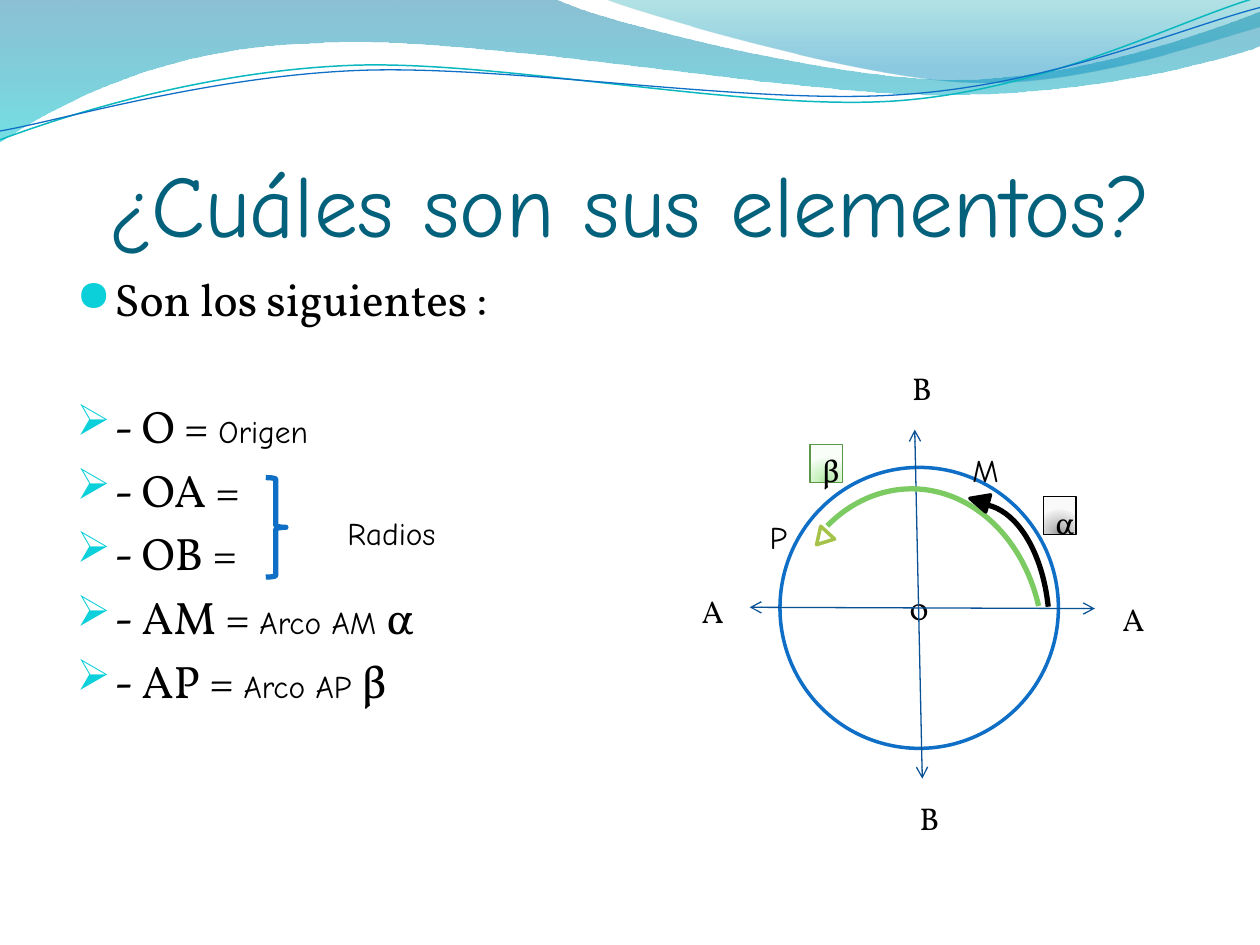
import pptx
import pptx.util
import pptx.dml.color
import pptx.enum.shapes
import pptx.enum.text
import pptx.oxml
import pptx.oxml.ns

SHAPE = pptx.enum.shapes.MSO_SHAPE
ALIGN = pptx.enum.text.PP_ALIGN
ANCHOR = pptx.enum.text.MSO_ANCHOR

THEME = {
    "hand": "Comic Neue", "serif": "Vollkorn", "bullet_font": "OpenSymbol",
    "title_size": 50, "body_size": 26, "label_size": 18, "body_gap": 5.2, "lead_gap": 41.5,
    "ink": "000000", "title": "04617B", "bullet": "0BD0D9", "paper": "FFFFFF",
    "blue": "0F6FC6", "axis": "095295", "teal": "0AB8BF",
    "green": "7CCA62", "green_edge": "5B9747", "lime": "A5C249",
}

# All positions are in cells of a grid of 100 columns by 75 rows.
COLUMNS, ROWS = 100, 75
CELL = pptx.util.Inches(10) // COLUMNS

# Waves: a start point, then line ends (2 numbers) or cubic curves (6 numbers).
BANDS = [
    ([(0, 0), (44, -0.1), (47.6, 1.7, 66.4, 6.3, 75.8, 6.3), (85.3, 6.3, 95.8, 2.6, 100, 0.9),
      (100.1, 3.6), (98.3, 4.4, 87, 7.6, 74.6, 7.5), (62.2, 7.5, 38.2, 2.8, 25.7, 3.4),
      (12.9, 3.6, 4.6, 8.3, -0.1, 11.3), (0, 0)],
     [(0, "0074A1", 45), (100, "00C6CF", 55)]),
    ([(47.9, -0.1), (50.9, 1.1, 68.2, 6.2, 76.9, 6.5), (85.6, 6.9, 96.1, 3.2, 100, 2.1),
      (100, 0), (47.9, -0.1)],
     [(0, "00A1A9", 30), (80, "008BBF", 45)]),
]
RIPPLES = [
    ([(0, 11.1), (4.8, 9.3, 15.8, 5.7, 27.7, 5.2), (39.5, 4.7, 59.3, 8.9, 71.3, 8),
      (83.3, 7.1, 93.8, 1.5, 99.8, -0.2)], "teal", 0.85),
    ([(0, 10.4), (4.7, 9.6, 16.4, 6.1, 28.3, 5.6), (40.3, 5.1, 59.7, 8.4, 71.7, 7.5),
      (83.6, 6.7, 94.1, 2.1, 100, 0.6)], "blue", 0.75),
]

TITLE = "¿Cuáles son sus elementos?"
# Each item: bullet, then its serif, handwritten and closing serif text.
ITEMS = [
    ("●", "Son los siguientes :", "", ""),
    ("➢", "- O = ", "Origen", ""),
    ("➢", "- OA =", "", ""),
    ("➢", "- OB =", "", ""),
    ("➢", "- AM = ", "Arco AM ", "α"),
    ("➢", "- AP = ", "Arco AP ", "β"),
]
LABELS = [
    ("Radios", "hand", (26.6, 40.3, 9.6, 4)),
    ("A", "serif", (54.7, 46.5, 2.8, 3)), ("A", "serif", (88.1, 47.1, 2.8, 3)),
    ("B", "serif", (71.4, 28.8, 2.7, 3)), ("B", "serif", (72, 62.9, 2.7, 3)),
    ("M", "hand", (76.2, 35.3, 3, 3)), ("P", "hand", (60.1, 40.6, 2.5, 3)),
]
AXES = [((72.6, 34.1), (73.2, 61.8)), ((59.5, 48.2), (86.9, 48.3))]
ARCS = [
    ((72, 40, 11.3, 20), (162, 204.97), "ink"),
    ((61.9, 38.8, 20.9, 25.3), (141.25, 204.97), "green"),
]
TIPS = [((77, 39, 1.4, 1.5), 285.5, "ink", "ink"), ((64.5, 42.1, 1.5, 1.3), 222.6, "paper", "lime")]
ANGLES = [
    ("α", (82.8, 39.4, 2.6, 3), "ink",
     [(0, "979797", 100), (43, "C6C6C6", 100), (93, "EEEEEE", 100), (100, "F9F9F9", 100)]),
    ("β", (64.3, 35.3, 2.6, 3), "green_edge",
     [(0, "ACE49F", 100), (43, "CDF3C4", 100), (93, "EFFBED", 100), (100, "F9FFF8", 100)]),
]

deck = pptx.Presentation()
deck.slide_width, deck.slide_height = COLUMNS * CELL, ROWS * CELL
page = deck.slides.add_slide(deck.slide_layouts[6])


def cells(numbers):
    return [round(number * CELL) for number in numbers]


def rgb(name):
    return pptx.dml.color.RGBColor.from_string(THEME[name])


def element(markup):
    """Parse one drawing element, with its namespace declared."""
    tag, rest = markup[:markup.index(">")], markup[markup.index(">"):]
    slash = "/" if tag.endswith("/") else ""
    return pptx.oxml.parse_xml(f'{tag.rstrip("/")} {pptx.oxml.ns.nsdecls("a")}{slash}{rest}')


def fill_gradient(shape, stops, shade):
    marks = "".join(
        f'<a:gs pos="{place * 1000}"><a:srgbClr val="{color}"><a:alpha val="{alpha * 1000}"/>'
        '</a:srgbClr></a:gs>' for place, color, alpha in stops)
    shape.fill.background()
    blank = shape._element.spPr.find(pptx.oxml.ns.qn("a:noFill"))
    blank.getparent().replace(blank, element(
        f'<a:gradFill rotWithShape="1"><a:gsLst>{marks}</a:gsLst>{shade}</a:gradFill>'))


def style(shape, line=None, weight=1, fill=None):
    if fill:
        shape.fill.solid()
        shape.fill.fore_color.rgb = rgb(fill)
    else:
        shape.fill.background()
    if line:
        shape.line.color.rgb = rgb(line)
        shape.line.width = pptx.util.Pt(weight)
    else:
        shape.line.fill.background()
    shape.shadow.inherit = False
    return shape


def add_preset(kind, frame, **look):
    return style(page.shapes.add_shape(kind, *cells(frame)), **look)


def add_wave(steps, close=False, **look):
    """Build a freeform through the end points, then bend its cubic steps."""
    ends = [cells(step[-2:]) for step in steps]
    builder = page.shapes.build_freeform(*ends[0], scale=1.0)
    builder.add_line_segments(ends[1:], close=close)
    wave = builder.convert_to_shape()
    outline = wave._element.spPr.find(".//" + pptx.oxml.ns.qn("a:path"))
    for index, step in enumerate(steps):
        if len(step) == 6:
            numbers = cells(step)
            points = "".join(f'<a:pt x="{x - wave.left}" y="{y - wave.top}"/>'
                             for x, y in zip(numbers[::2], numbers[1::2]))
            outline.replace(outline[index], element(f"<a:cubicBezTo>{points}</a:cubicBezTo>"))
    return style(wave, **look)


def write(para, text, font="serif", size="label_size", color="ink", align=ALIGN.LEFT):
    para.alignment = align
    span = para.add_run()
    span.text = text
    span.font.name = THEME[font]
    span.font.size = pptx.util.Pt(THEME[size])
    span.font.color.rgb = rgb(color)


def set_frame(box, wrap=True, anchor=ANCHOR.TOP):
    box.text_frame.word_wrap = wrap
    box.text_frame.vertical_anchor = anchor
    return box.text_frame.paragraphs[0]


def add_bullet(para, mark):
    props = para._p.get_or_add_pPr()
    props.set("marL", str(3 * CELL))
    props.set("indent", str(-3 * CELL))
    for markup in (f'<a:buClr><a:srgbClr val="{THEME["bullet"]}"/></a:buClr>',
                   '<a:buSzPct val="95000"/>', f'<a:buFont typeface="{THEME["bullet_font"]}"/>',
                   f'<a:buChar char="{mark}"/>'):
        props.append(element(markup))


for steps, stops in BANDS:
    fill_gradient(add_wave(steps, close=True), stops, '<a:lin ang="5400000" scaled="0"/>')
for steps, color, weight in RIPPLES:
    add_wave(steps, line=color, weight=weight)

heading = page.shapes.add_textbox(*cells((5, 7.7, 90, 12.5)))
frame = heading.text_frame
frame.margin_left = frame.margin_right = frame.margin_bottom = 0
write(set_frame(heading, anchor=ANCHOR.BOTTOM), TITLE, font="hand", size="title_size",
      color="title", align=ALIGN.CENTER)

body = page.shapes.add_textbox(*cells((5.1, 21, 90, 48)))
para = set_frame(body)
for row, (mark, lead, hand, symbol) in enumerate(ITEMS):
    if row:
        para = body.text_frame.add_paragraph()
        para.space_before = pptx.util.Pt(THEME["lead_gap" if row == 1 else "body_gap"])
    add_bullet(para, mark)
    write(para, lead, size="body_size")
    if hand:
        write(para, hand, font="hand")
    if symbol:
        write(para, symbol, size="body_size")

add_preset(SHAPE.RIGHT_BRACE, (21.1, 37.9, 1.6, 7.9), line="blue", weight=3)
circle = add_preset(SHAPE.OVAL, (61.9, 37.1, 22.1, 22.3), line="blue", weight=2, fill="paper")
write(set_frame(circle, anchor=ANCHOR.MIDDLE), "0", align=ALIGN.CENTER)

for start, end in AXES:
    axis = page.shapes.add_connector(pptx.enum.shapes.MSO_CONNECTOR.STRAIGHT, *cells(start + end))
    axis.line.color.rgb = rgb("axis")
    axis.line.width = pptx.util.Pt(0.75)
    for tip in ("head", "tail"):
        axis.line._get_or_add_ln().append(element(f'<a:{tip}End type="arrow"/>'))
    axis._element.spPr.append(element("<a:effectLst/>"))

for place, sweep, color in ARCS:
    arc = add_preset(SHAPE.ARC, place, line=color, weight=3)
    arc.adjustments[0], arc.adjustments[1] = sweep
for place, turn, fill, line in TIPS:
    add_preset(SHAPE.ISOSCELES_TRIANGLE, place, line=line, weight=2, fill=fill).rotation = turn

for letter, place, line, stops in ANGLES:
    tag = add_preset(SHAPE.RECTANGLE, place, line=line, weight=0.75)
    fill_gradient(tag, stops, '<a:path path="circle"><a:fillToRect l="50000" t="130000" '
                              'r="50000" b="-30000"/></a:path>')
    write(set_frame(tag, wrap=False), letter)
for text, font, place in LABELS:
    write(set_frame(page.shapes.add_textbox(*cells(place)), wrap=False), text, font=font)

deck.save("out.pptx")
